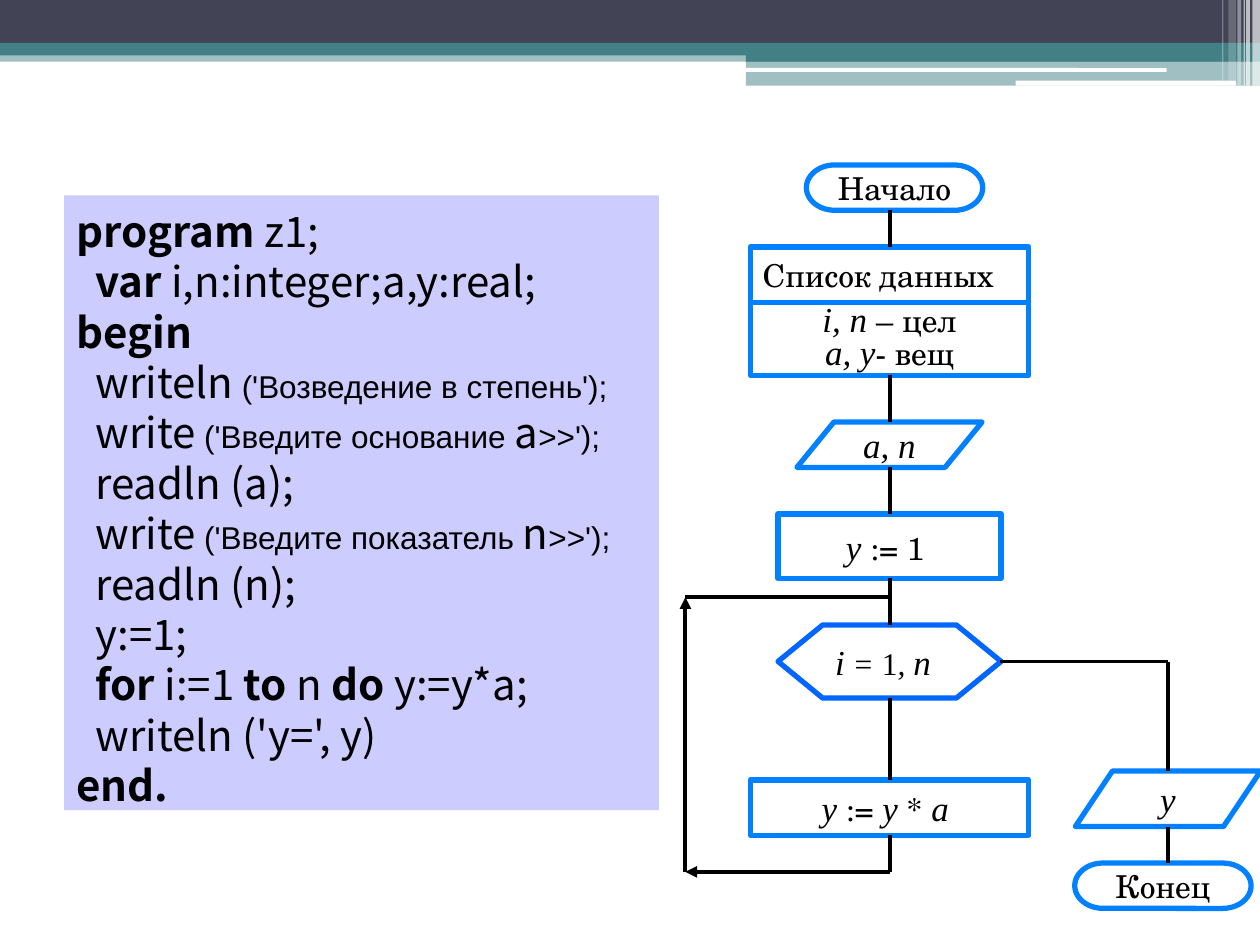
from dataclasses import dataclass, field

from lxml.etree import SubElement
from pptx import Presentation
from pptx.dml.color import RGBColor
from pptx.enum.shapes import MSO_CONNECTOR as Conn, MSO_SHAPE as Geo
from pptx.enum.text import MSO_ANCHOR as Anchor, MSO_AUTO_SIZE as Fit, PP_ALIGN as Align
from pptx.oxml.ns import qn
from pptx.util import Inches, Pt


@dataclass(frozen=True)
class Face:
    font: str
    size: int
    bold: bool = False
    italic: bool = False


@dataclass(frozen=True)
class Theme:
    navy: str = "424456"
    teal: str = "438086"
    white: str = "FFFFFF"
    black: str = "000000"
    lilac: str = "CCCCFF"
    blue: str = "0180FF"
    deep: str = "0066FF"
    edge: float = 3
    wire: float = 2.25
    code: Face = Face("Noto Sans CJK SC", 24)
    key: Face = Face("Noto Sans CJK SC", 24, bold=True)
    quote: Face = Face("Arial", 18)
    word: Face = Face("TeX Gyre Schola", 18)
    math: Face = Face("Times New Roman", 20, italic=True)
    sign: Face = Face("Times New Roman", 18, italic=True)
    digit: Face = Face("Times New Roman", 18)


T = Theme()
Run = tuple[str, Face]


@dataclass(frozen=True)
class Bar:
    left: float
    top: float
    width: float
    height: float
    color: str
    alpha: int = 100
    geo: Geo = Geo.RECTANGLE


@dataclass(frozen=True)
class Node:
    """A flowchart block, placed by the middle of its top side."""
    name: str
    geo: Geo
    mid: float
    top: float
    width: float
    height: float
    lines: list[list[Run]]
    align: Align = Align.CENTER
    space: float = 1.0
    line: str = T.blue
    fill: str = ""


@dataclass(frozen=True)
class Link:
    """A line; above and below name the rectangles it joins."""
    start: tuple[float, float]
    stop: tuple[float, float]
    above: str = ""
    below: str = ""
    arrow: bool = False


@dataclass(frozen=True)
class Row:
    runs: list[Run] = field(default_factory=list)
    inset: bool = True


SPINE, EXIT, LOOP = 7.06, 9.27, 5.44
BACK, FOOT, TURN = 4.74, 6.92, 5.25

BARS = [
    Bar(0, 0.4, 10, 0.09, T.teal, 50),
    Bar(0, 0, 10, 0.34, T.navy),
    Bar(0, 0.34, 10, 0.1, T.teal),
    Bar(5.92, 0.39, 4.08, 0.1, T.teal),
    Bar(5.92, 0.48, 4.08, 0.2, T.teal, 50),
    Bar(5.91, 0.54, 3.35, 0.03, T.white, geo=Geo.ROUNDED_RECTANGLE),
    Bar(8.06, 0.64, 1.75, 0.04, T.white, geo=Geo.ROUNDED_RECTANGLE),
    Bar(9.94, 0, 0.06, 0.68, T.white, 65),
    Bar(9.89, 0, 0.03, 0.68, T.white, 65),
    Bar(9.87, 0, 0.01, 0.68, T.white, 60),
    Bar(9.82, 0, 0.03, 0.68, T.white, 40),
    Bar(9.75, 0, 0.06, 0.64, T.white, 20),
    Bar(9.7, 0, 0.01, 0.64, T.white, 30),
    Bar(0.51, 1.55, 4.72, 4.88, T.lilac),
]

CODE = [
    Row([("program ", T.key), ("z1;", T.code)], inset=False),
    Row([("var ", T.key), ("i,n:integer;a,y:real;", T.code)]),
    Row([("begin", T.key)], inset=False),
    Row([("writeln", T.code), (" ('Возведение в степень');", T.quote)]),
    Row([("write", T.code), (" ('Введите основание ", T.quote), ("a", T.code), (">>');", T.quote)]),
    Row([("readln (a);", T.code)]),
    Row([("write", T.code), (" ('Введите показатель ", T.quote), ("n", T.code), (">>');", T.quote)]),
    Row([("readln (n);", T.code)]),
    Row([("y:=1;", T.code)]),
    Row([("for", T.key), (" i:=1 ", T.code), ("to", T.key), (" n ", T.code),
         ("do", T.key), (" y:=y*a;", T.code)]),
    Row([("writeln ('y=', y)", T.code)]),
    Row([("end.", T.key)], inset=False),
]

NODES = [
    Node("start", Geo.FLOWCHART_TERMINATOR, 7.1, 1.31, 1.4, 0.36, [[("Начало", T.word)]]),
    Node("title", Geo.RECTANGLE, SPINE, 1.96, 2.21, 0.44, [[("Список данных", T.word)]], Align.LEFT),
    Node("vars", Geo.RECTANGLE, SPINE, 2.4, 2.21, 0.58,
         [[("i, n", T.math), (" – цел", T.word)], [("a, y", T.math), ("- вещ", T.word)]], space=0.8),
    Node("input", Geo.FLOWCHART_DATA, SPINE, 3.35, 1.47, 0.36, [[("a, n", T.math)]]),
    Node("init", Geo.RECTANGLE, SPINE, 4.08, 1.77, 0.51, [[("y ", T.math), (":= 1 ", T.word)]]),
    Node("count", Geo.FLOWCHART_PREPARATION, SPINE, 4.96, 1.77, 0.58,
         [[("i", T.math), (" = ", T.sign), ("1", T.digit), (", ", T.sign), ("n", T.math)]],
         Align.LEFT, line=T.deep, fill=T.white),
    Node("step", Geo.RECTANGLE, SPINE, 6.19, 2.21, 0.44,
         [[("y", T.math), (" := ", T.word), ("y", T.math), (" * ", T.word), ("a", T.math), (" ", T.word)]]),
    Node("output", Geo.FLOWCHART_DATA, EXIT, 6.12, 1.47, 0.44, [[("y", T.math)]]),
    Node("end", Geo.FLOWCHART_TERMINATOR, 9.23, 6.85, 1.4, 0.36, [[("Конец", T.word)]]),
]

LINKS = [
    Link((SPINE, 1.67), (SPINE, 1.96), below="title"),
    Link((SPINE, 2.98), (SPINE, 3.35), above="vars"),
    Link((SPINE, 3.71), (SPINE, 4.08), below="init"),
    Link((SPINE, 4.59), (SPINE, 4.96), above="init"),
    Link((SPINE, 5.54), (SPINE, 6.19), below="step"),
    Link((SPINE, 6.63), (SPINE, FOOT), above="step"),
    Link((LOOP, FOOT), (SPINE, FOOT), arrow=True),
    Link((LOOP, BACK), (LOOP, FOOT), arrow=True),
    Link((LOOP, BACK), (SPINE, BACK)),
    Link((7.94, TURN), (EXIT, TURN)),
    Link((EXIT, TURN), (EXIT, 6.12)),
    Link((EXIT, 6.56), (EXIT, 6.85)),
]


def rgb(color: str) -> RGBColor:
    return RGBColor.from_string(color)


def add_runs(para, runs: list[Run]) -> None:
    for text, face in runs:
        run = para.add_run()
        run.text = text
        font = run.font
        font.name, font.size = face.font, Pt(face.size)
        font.bold, font.italic = face.bold, face.italic
        font.color.rgb = rgb(T.black)


def next_para(frame, index: int):
    return frame.add_paragraph() if index else frame.paragraphs[0]


def draw_bar(shapes, bar: Bar) -> None:
    shape = shapes.add_shape(bar.geo, *map(Inches, (bar.left, bar.top, bar.width, bar.height)))
    shape.shadow.inherit = False
    shape.line.fill.background()
    shape.fill.solid()
    shape.fill.fore_color.rgb = rgb(bar.color)
    if bar.alpha < 100:
        tint = shape.fill._xPr.find(".//" + qn("a:srgbClr"))
        SubElement(tint, qn("a:alpha")).set("val", str(bar.alpha * 1000))


def draw_code(shapes, rows: list[Row]) -> None:
    frame = shapes.add_textbox(*map(Inches, (0.51, 1.55, 4.8, 4.95))).text_frame
    frame.word_wrap = True
    frame.auto_size = Fit.SHAPE_TO_FIT_TEXT
    frame.margin_top = Inches(0.08)
    for index, row in enumerate(rows):
        para = next_para(frame, index)
        para.line_spacing = Pt(28.8)
        if row.inset:
            para._p.get_or_add_pPr().set("marL", str(Inches(0.15)))
        add_runs(para, row.runs)


def draw_node(shapes, node: Node):
    left = node.mid - node.width / 2
    shape = shapes.add_shape(node.geo, *map(Inches, (left, node.top, node.width, node.height)))
    shape.shadow.inherit = False
    shape.line.color.rgb = rgb(node.line)
    shape.line.width = Pt(T.edge)
    if node.fill:
        shape.fill.solid()
        shape.fill.fore_color.rgb = rgb(node.fill)
    else:
        shape.fill.background()
    frame = shape.text_frame
    frame.word_wrap = False
    frame.vertical_anchor = Anchor.MIDDLE
    for index, runs in enumerate(node.lines):
        para = next_para(frame, index)
        para.alignment, para.line_spacing = node.align, node.space
        add_runs(para, runs)
    return shape


def draw_link(shapes, link: Link, made: dict) -> None:
    wire = shapes.add_connector(Conn.STRAIGHT, *map(Inches, link.start + link.stop))
    wire.line.color.rgb = rgb(T.black)
    wire.line.width = Pt(T.wire)
    if link.arrow:
        SubElement(wire.line._get_or_add_ln(), qn("a:headEnd")).set("type", "triangle")
    SubElement(wire._element.spPr, qn("a:effectLst"))
    if link.above:
        wire.begin_connect(made[link.above], 2)
    if link.below:
        wire.end_connect(made[link.below], 0)


def main() -> None:
    deck = Presentation()
    deck.slide_width, deck.slide_height = Inches(10), Inches(7.5)
    shapes = deck.slides.add_slide(deck.slide_layouts[6]).shapes
    for bar in BARS:
        draw_bar(shapes, bar)
    draw_code(shapes, CODE)
    made = {node.name: draw_node(shapes, node) for node in NODES}
    for link in LINKS:
        draw_link(shapes, link, made)
    deck.save("out.pptx")


if __name__ == "__main__":
    main()
